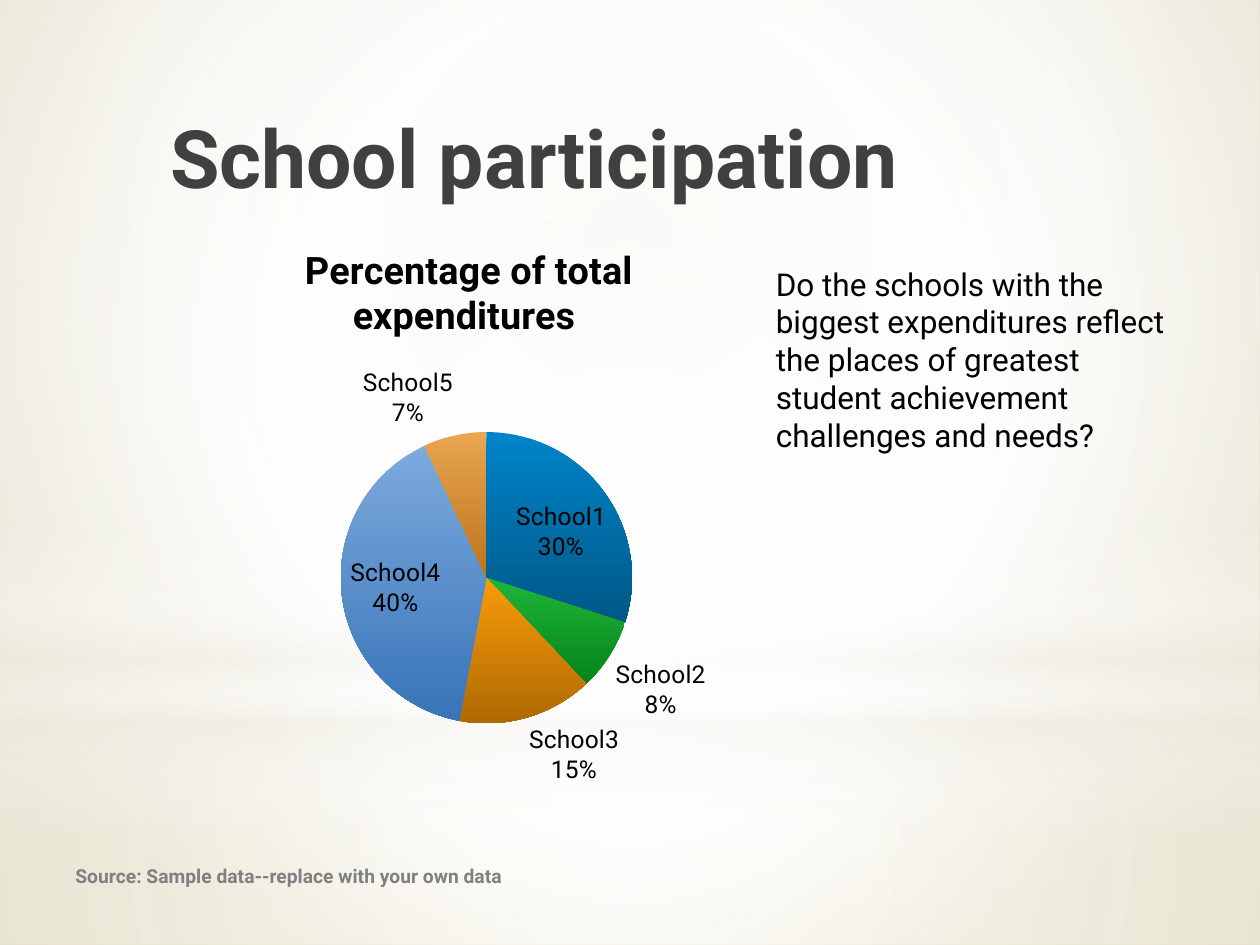
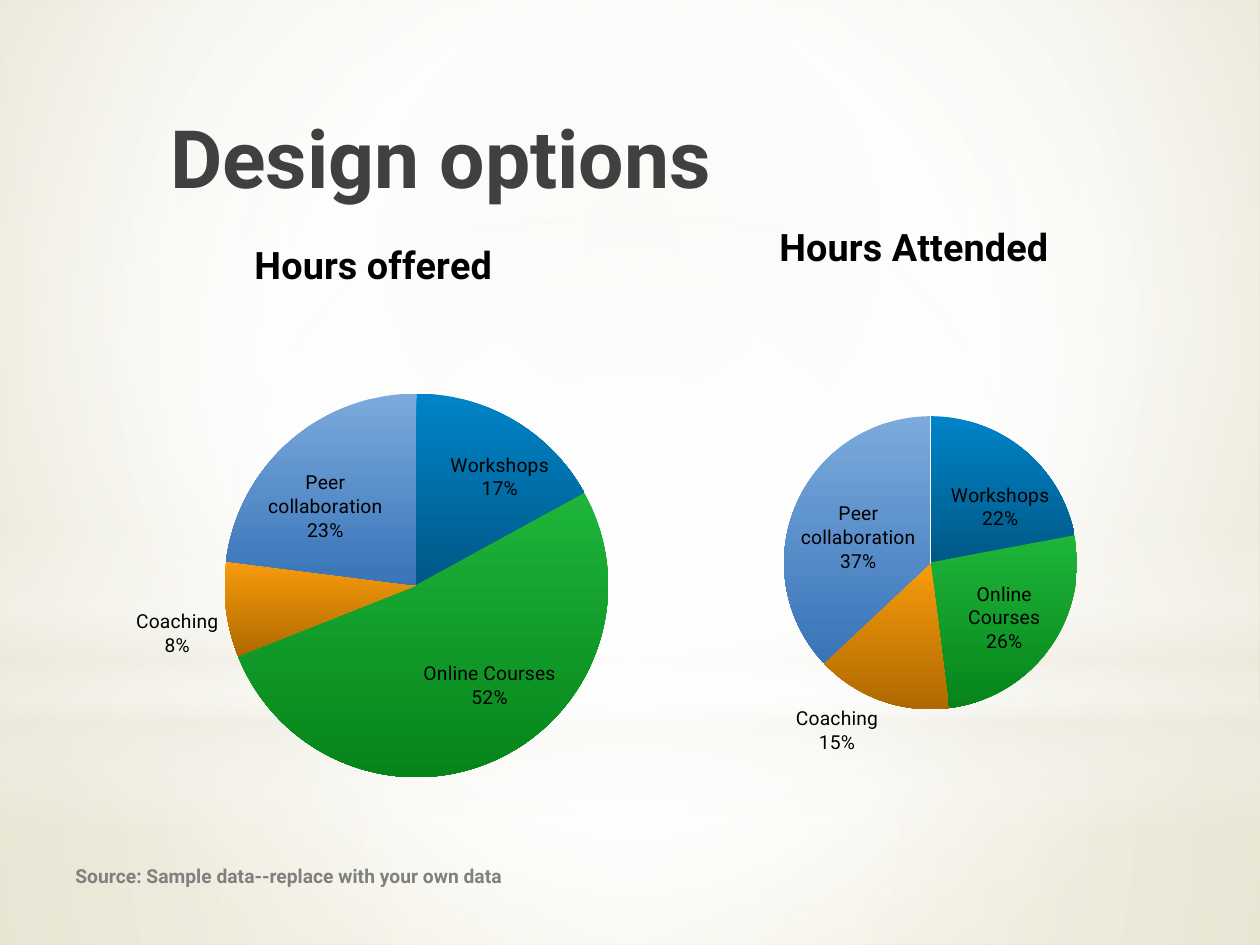
from pptx import Presentation
from pptx import util as u
from pptx.chart import data as cd
from pptx.dml.color import RGBColor
from pptx.enum import chart as ec, shapes, text
from pptx.oxml import parse_xml
from pptx.oxml import ns

FONT = "Roboto"
BLACK = RGBColor(0x00, 0x00, 0x00)
GREY = RGBColor(0x80, 0x80, 0x80)
DARK = RGBColor(0x40, 0x40, 0x40)
NAVY = RGBColor(0x1F, 0x49, 0x7D)
WHITE = RGBColor(0xFF, 0xFF, 0xFF)
CREAM = RGBColor(0xEE, 0xEC, 0xE1)
SAND = RGBColor(0xE7, 0xE4, 0xD4)
KHAKI = RGBColor(0xD5, 0xCC, 0x9F)
# Top and bottom colour of each slice
TONES = [
    (RGBColor(0x00, 0x84, 0xC9), RGBColor(0x00, 0x58, 0x86)),
    (RGBColor(0x1E, 0xB5, 0x3A), RGBColor(0x06, 0x84, 0x1A)),
    (RGBColor(0xF9, 0x9B, 0x0C), RGBColor(0xAE, 0x69, 0x00)),
    (RGBColor(0x7C, 0xAA, 0xDD), RGBColor(0x38, 0x74, 0xB8)),
    (RGBColor(0xE9, 0xA5, 0x50), RGBColor(0xBC, 0x74, 0x1C)),
]
CENTRE = (50, 50, 50, 50)


def shade(fill, stops, focus=None):
    """Gradient of (place, colour, opacity): round with a focus, else downward."""
    fill.gradient()
    old = fill._xPr.find(ns.qn("a:gradFill"))
    marks = "".join(
        f'<a:gs pos="{at * 1000}"><a:srgbClr val="{tone}">'
        f'<a:alpha val="{alpha * 1000}"/></a:srgbClr></a:gs>'
        for at, tone, alpha in stops)
    if focus:
        l, t, r, b = (side * 1000 for side in focus)
        flow = (f'<a:path path="circle"><a:fillToRect l="{l}" t="{t}" '
                f'r="{r}" b="{b}"/></a:path>')
    else:
        flow = '<a:lin ang="5400000" scaled="0"/>'
    new = parse_xml(f'<a:gradFill {ns.nsdecls("a")} rotWithShape="1">'
                    f'<a:gsLst>{marks}</a:gsLst>{flow}</a:gradFill>')
    old.getparent().replace(old, new)


def write(slide, box, words, size, tone, bold=False, anchor=text.MSO_ANCHOR.TOP):
    frame = slide.shapes.add_textbox(*map(u.Cm, box)).text_frame
    frame.word_wrap = True
    frame.vertical_anchor = anchor
    run = frame.paragraphs[0].add_run()
    run.text = words
    run.font.name, run.font.size, run.font.bold = FONT, u.Pt(size), bold
    run.font.color.rgb = tone
    return run


deck = Presentation()
deck.slide_width, deck.slide_height = u.Cm(25.4), u.Cm(19.05)
master = deck.slide_master
blank = deck.slide_layouts[6]

# Content: title and pies (chart box, pie left/top/width, label size, title place)
schools = [f"School{n}" for n in range(1, 6)]
modes = ["Workshops", "Online Courses", "Coaching", "Peer collaboration"]
pages = [
    ("School participation", [
        ("Percentage of total expenditures ", schools, (30, 8, 15, 40, 7),
         (3.18, 4.42, 12.55, 11.79), (6.87, 8.71, 5.87), 14, None)]),
    ("Design options", [
        ("Hours offered", modes, (17, 52, 8, 23),
         (2.36, 4.32, 10.34, 12.01), (4.52, 7.94, 7.74), 11, None),
        ("Hours Attended", modes, (22, 26, 15, 37),
         (12.7, 4.32, 11.05, 12.01), (15.8, 8.39, 5.91), 11, (0.26, 0.0))]),
]
slides = [deck.slides.add_slide(blank) for page in pages]

# Shared backdrop, kept on the master
shade(master.background.fill,
      [(0, SAND, 100), (60, WHITE, 100), (100, KHAKI, 100)], (20, 10, 20, 60))
rect, oval = shapes.MSO_SHAPE.RECTANGLE, shapes.MSO_SHAPE.OVAL
layers = [
    (rect, 14.17, 4.88, [(0, WHITE, 91), (37, WHITE, 76), (100, CREAM, 79)], CENTRE),
    (rect, 0, 14.17, [(0, WHITE, 83), (48, WHITE, 83), (100, CREAM, 83)], CENTRE),
    (rect, 10.46, 6.35, [(0, WHITE, 0), (29, WHITE, 30), (45, CREAM, 40),
                         (55, WHITE, 26), (65, CREAM, 60), (100, WHITE, 0)], None),
    (oval, 4.45, 14.17, [(0, WHITE, 100), (56, WHITE, 0)], CENTRE),
]
for n, (kind, top, high, stops, focus) in enumerate(layers):
    layer = slides[0].shapes.add_shape(kind, 0, u.Cm(top), deck.slide_width, u.Cm(high))
    layer.shadow.inherit = False
    layer.line.fill.background()
    shade(layer.fill, stops, focus)
    layer.element.nvSpPr.cNvPr.set("id", str(20 + n))
    master.shapes.element.insert(2 + n, layer.element)

for slide, (head, pies) in zip(slides, pages):
    # Title
    run = write(slide, (3.18, 2.06, 18.08, 3.18), head, 46, DARK, True)
    shade(run.font.fill, [(0, BLACK, 100), (40, DARK, 100), (100, NAVY, 65)])

    # Pies
    for name, cats, vals, box, pie, size, place in pies:
        data = cd.CategoryChartData()
        data.categories = cats
        data.add_series(name, vals)
        chart = slide.shapes.add_chart(
            ec.XL_CHART_TYPE.PIE, *map(u.Cm, box), data).chart
        chart.has_legend = False
        chart.font.name, chart.font.size = FONT, u.Pt(18)
        chart.font.color.rgb = BLACK

        chart.has_title = True
        run = chart.chart_title.text_frame.paragraphs[0].add_run()
        run.text = name
        run.font.name, run.font.size, run.font.bold = FONT, u.Pt(21.6), True
        run.font.color.rgb = BLACK

        series = chart.plots[0].series[0]
        for n in range(len(vals)):
            top, base = TONES[n]
            form = series.points[n].format
            shade(form.fill, [(0, top, 100), (100, base, 100)])
            form.line.fill.background()

        tags = series.data_labels
        tags.show_value = False
        tags.show_category_name = tags.show_percentage = True
        tags.number_format, tags.number_format_is_linked = "0%", False
        tags.position = ec.XL_LABEL_POSITION.BEST_FIT
        tags.font.name, tags.font.size = FONT, u.Pt(size)
        tags.font.color.rgb = BLACK
        tags._element.find(ns.qn("c:showBubbleSize")).addnext(parse_xml(
            f'<c:separator {ns.nsdecls("c")}>\n</c:separator>'))

        # Fixed places inside the chart, as shares of its box
        left, top, wide, high = box
        x, y, size = pie
        spots = [(chart.plots[0]._element.getparent(), {
            "x": (x - left) / wide, "y": (y - top) / high,
            "w": size / wide, "h": size / high})]
        if place:
            spots.append((chart.chart_title._element, dict(zip("xy", place))))
        for host, spot in spots:
            for old in host.findall(ns.qn("c:layout")):
                host.remove(old)
            inner = '<c:layoutTarget val="inner"/>' if "w" in spot else ""
            modes_xml = '<c:xMode val="edge"/><c:yMode val="edge"/>'
            sizes = "".join(f'<c:{k} val="{v:.3f}"/>' for k, v in spot.items())
            layout = parse_xml(
                f'<c:layout {ns.nsdecls("c")}><c:manualLayout>{inner}{modes_xml}'
                f'{sizes}</c:manualLayout></c:layout>')
            host.insert(0 if inner else 1, layout)

    # Question beside the school pie
    if slide is slides[0]:
        write(slide, (15.39, 5.21, 8.64, 4.11),
              "Do the schools with the biggest expenditures reflect the places of "
              "greatest student achievement challenges and needs?", 18, BLACK)

    # Source line
    write(slide, (1.27, 17.15, 15.44, 1.02),
          "Source: Sample data--replace with your own data", 11, GREY, True,
          text.MSO_ANCHOR.MIDDLE)

deck.save("out.pptx")
